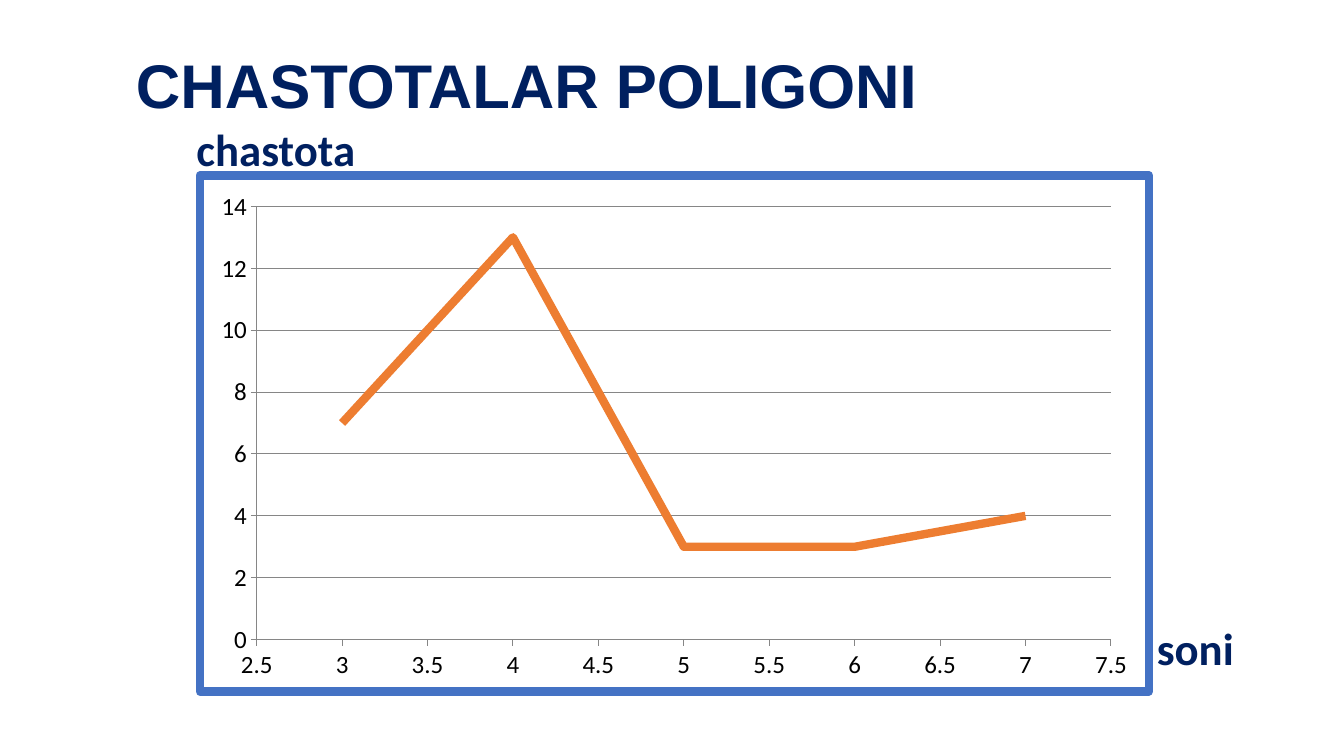
import dataclasses

import lxml.etree
import pptx
import pptx.chart.data
import pptx.dml.color
import pptx.enum.chart
import pptx.enum.text
import pptx.oxml
import pptx.oxml.ns
import pptx.util

Pt = pptx.util.Pt
qn = pptx.oxml.ns.qn


@dataclasses.dataclass(frozen=True)
class Theme:
    heading_font: str = "Arial"
    body_font: str = "Calibri"
    navy: str = "002060"
    frame: str = "4472C4"
    line: str = "ED7D31"
    grid: str = "868686"
    ink: str = "000000"
    title_size: int = 44
    label_size: int = 32
    tick_size: int = 18
    stroke: int = 6


THEME = Theme()
FREQUENCIES = {3: 7, 4: 13, 5: 3, 6: 3, 7: 4}


def rgb(color):
    return pptx.dml.color.RGBColor.from_string(color)


def add_text(slide, text, box, *, size=THEME.label_size, font=THEME.body_font,
             color=THEME.navy, wrap=False, spacing=None):
    sp = slide.shapes.add_textbox(*map(Pt, box))
    tf = sp.text_frame
    tf.word_wrap = wrap
    tf.vertical_anchor = pptx.enum.text.MSO_ANCHOR.MIDDLE
    p = tf.paragraphs[0]
    p.line_spacing = spacing
    r = p.add_run()
    r.text = text
    r.font.size, r.font.name, r.font.bold = Pt(size), font, True
    r.font.color.rgb = rgb(color)


def style_axis(axis, low, high, step):
    axis.minimum_scale, axis.maximum_scale, axis.major_unit = low, high, step
    axis.major_tick_mark = pptx.enum.chart.XL_TICK_MARK.OUTSIDE
    axis.minor_tick_mark = pptx.enum.chart.XL_TICK_MARK.NONE
    axis.tick_labels.number_format = "General"
    axis.tick_labels.number_format_is_linked = False
    axis.format.line.color.rgb = rgb(THEME.grid)
    axis.format.line.width = Pt(0.75)


def frame_chart(chart):
    """Outline the chart area and fix the inner plot rectangle."""
    ns = pptx.oxml.ns.nsdecls("c", "a")
    border = pptx.oxml.parse_xml(
        f'<c:spPr {ns}><a:noFill/><a:ln w="{Pt(THEME.stroke)}"><a:solidFill>'
        f'<a:srgbClr val="{THEME.frame}"/></a:solidFill><a:round/></a:ln></c:spPr>')
    c = chart.element.find(qn("c:chart"))
    c.addnext(border)

    plot = c.find(qn("c:plotArea"))
    for old in plot.findall(qn("c:layout")):
        plot.remove(old)
    layout = pptx.oxml.parse_xml(f"<c:layout {ns}><c:manualLayout/></c:layout>")
    settings = {"layoutTarget": "inner", "xMode": "edge", "yMode": "edge",
                "x": 0.06, "y": 0.06, "w": 0.9, "h": 0.84}
    for tag, value in settings.items():
        lxml.etree.SubElement(layout[0], qn(f"c:{tag}")).set("val", str(value))
    plot.insert(0, layout)


def add_polygon_chart(slide, box):
    data = pptx.chart.data.XyChartData()
    points = data.add_series("Series 1")
    for x, y in FREQUENCIES.items():
        points.add_data_point(x, y)
    kind = pptx.enum.chart.XL_CHART_TYPE.XY_SCATTER_LINES_NO_MARKERS
    chart = slide.shapes.add_chart(kind, *map(Pt, box), data).chart
    chart.has_legend = chart.has_title = False
    chart.font.size, chart.font.name = Pt(THEME.tick_size), THEME.body_font
    chart.font.color.rgb = rgb(THEME.ink)
    chart.plots[0].vary_by_categories = False

    # Frequency line
    series = chart.plots[0].series[0]
    series.smooth = False
    series.format.line.color.rgb = rgb(THEME.line)
    series.format.line.width = Pt(THEME.stroke)

    # Axes and gridlines
    style_axis(chart.category_axis, 2.5, 7.5, 0.5)
    style_axis(chart.value_axis, 0, 14, 2)
    chart.category_axis.has_major_gridlines = False
    chart.value_axis.has_major_gridlines = True
    grid = chart.value_axis.major_gridlines.format.line
    grid.color.rgb, grid.width = rgb(THEME.grid), Pt(0.75)
    frame_chart(chart)


def add_labelled_chart(slide, box):
    """Chart with its axis names above the left and beside the right edge."""
    left, top, width, height = box
    add_polygon_chart(slide, box)
    add_text(slide, "soni", (left + width - 4.5, top + height - 57, 70, 46))
    add_text(slide, "chastota", (left - 6.5, top - 39.5, 129, 46))


def build_slide(prs):
    slide = prs.slides.add_slide(prs.slide_layouts[6])
    add_text(slide, "CHASTOTALAR POLIGONI", (90, 11, 828, 104),
             size=THEME.title_size, font=THEME.heading_font, wrap=True, spacing=0.9)
    add_labelled_chart(slide, (139.7, 122.4, 684, 374.4))


def main():
    prs = pptx.Presentation()
    prs.slide_width, prs.slide_height = Pt(960), Pt(540)
    build_slide(prs)
    prs.save("out.pptx")


if __name__ == "__main__":
    main()
